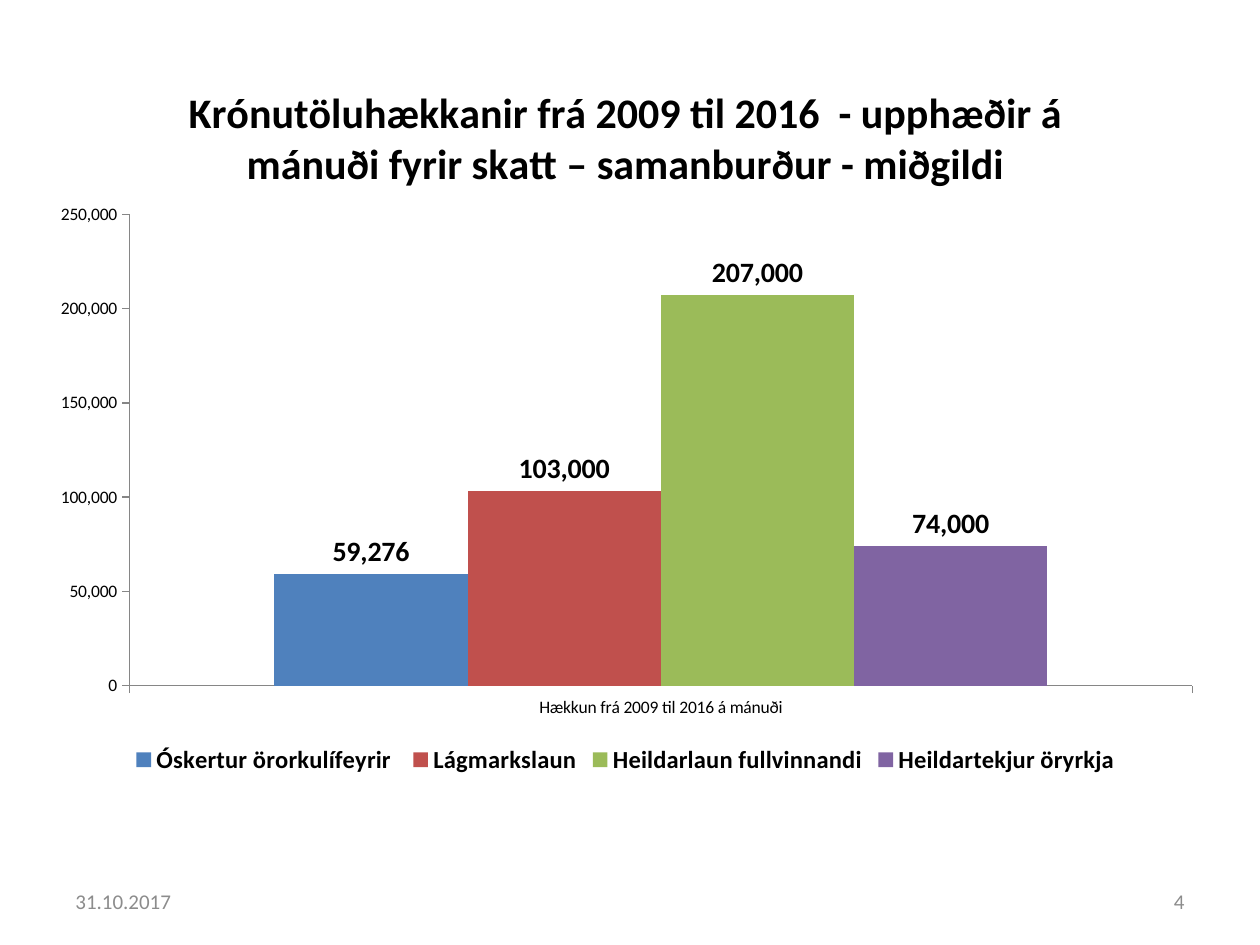
from lxml.etree import SubElement
from pptx import Presentation
from pptx.chart.data import CategoryChartData
from pptx.dml.color import RGBColor
from pptx.enum.chart import XL_CHART_TYPE, XL_LABEL_POSITION, XL_LEGEND_POSITION, XL_TICK_MARK
from pptx.enum.text import MSO_ANCHOR, PP_ALIGN
from pptx.oxml.ns import qn
from pptx.util import Emu, Pt

FONT = "Calibri"
BLACK = RGBColor(0x00, 0x00, 0x00)
GRAY = RGBColor(0x8C, 0x8C, 0x8C)
AXIS = RGBColor(0x86, 0x86, 0x86)
BLUE = RGBColor(0x4F, 0x81, 0xBD)
RED = RGBColor(0xC0, 0x50, 0x4D)
GREEN = RGBColor(0x9B, 0xBB, 0x59)
PURPLE = RGBColor(0x80, 0x64, 0xA2)
BARS = [
    ("Óskertur örorkulífeyrir ", 59276, BLUE),
    ("Lágmarkslaun", 103000, RED),
    ("Heildarlaun fullvinnandi", 207000, GREEN),
    ("Heildartekjur öryrkja", 74000, PURPLE),
]


def px(n):
    return Emu(n * 914400 // 126)


def style(font, size, color=BLACK, bold=False):
    font.name = FONT
    font.size = Pt(size)
    font.bold = bold
    font.color.rgb = color


deck = Presentation()
deck.slide_width, deck.slide_height = px(1260), px(945)
slide = deck.slides.add_slide(deck.slide_layouts[6])

# Date and page number
for left, text, align in [(63, "31.10.2017", PP_ALIGN.LEFT), (903, "4", PP_ALIGN.RIGHT)]:
    frame = slide.shapes.add_textbox(px(left), px(876), px(294), px(50)).text_frame
    frame.word_wrap = True
    frame.vertical_anchor = MSO_ANCHOR.MIDDLE
    line = frame.paragraphs[0]
    line.alignment = align
    run = line.add_run()
    run.text = text
    style(run.font, 12, GRAY)

# Chart
data = CategoryChartData(number_format="#,##0")
data.categories = ["Hækkun frá 2009 til 2016 á mánuði"]
for name, value, color in BARS:
    data.add_series(name, [value])
chart = slide.shapes.add_chart(
    XL_CHART_TYPE.COLUMN_CLUSTERED, px(35), px(55), px(1181), px(725), data
).chart
style(chart.font, 10)

chart.has_title = True
run = chart.chart_title.text_frame.paragraphs[0].add_run()
run.text = ("Krónutöluhækkanir frá 2009 til 2016  - upphæðir á mánuði "
            "fyrir skatt – samanburður - miðgildi")
style(run.font, 24, bold=True)
chart.chart_title.include_in_layout = False

chart.has_legend = True
chart.legend.position = XL_LEGEND_POSITION.BOTTOM
chart.legend.include_in_layout = False
style(chart.legend.font, 14, bold=True)

# Bars
plot = chart.plots[0]
plot.gap_width = 150
plot.overlap = 0
plot.vary_by_categories = False
for bar, (name, value, color) in zip(plot.series, BARS):
    bar.format.fill.solid()
    bar.format.fill.fore_color.rgb = color
    tags = bar.data_labels
    tags.show_value = True
    tags.position = XL_LABEL_POSITION.OUTSIDE_END
    tags.number_format = "#,##0"
    tags.number_format_is_linked = False
    style(tags.font, 16, bold=True)

# Axes
for axis in (chart.category_axis, chart.value_axis):
    axis.has_major_gridlines = False
    axis.major_tick_mark = XL_TICK_MARK.OUTSIDE
    axis.minor_tick_mark = XL_TICK_MARK.NONE
    axis.format.line.color.rgb = AXIS
    axis.format.line.width = Pt(0.75)
    style(axis.tick_labels.font, 10)
scale = chart.value_axis
scale.minimum_scale, scale.maximum_scale, scale.major_unit = 0, 250000, 50000
scale.tick_labels.number_format = "#,##0"
scale.tick_labels.number_format_is_linked = False

# Fixed inner plot area, as shares of the chart
area = chart._chartSpace.chart.plotArea
for old in area.findall(qn("c:layout")):
    area.remove(old)
layout = SubElement(area, qn("c:layout"))
area.insert(0, layout)
manual = SubElement(layout, qn("c:manualLayout"))
for tag, val in [("layoutTarget", "inner"), ("xMode", "edge"), ("yMode", "edge"),
                 ("x", "0.08"), ("y", "0.22"), ("w", "0.9"), ("h", "0.65")]:
    SubElement(manual, qn("c:" + tag)).set("val", val)

deck.save("out.pptx")
